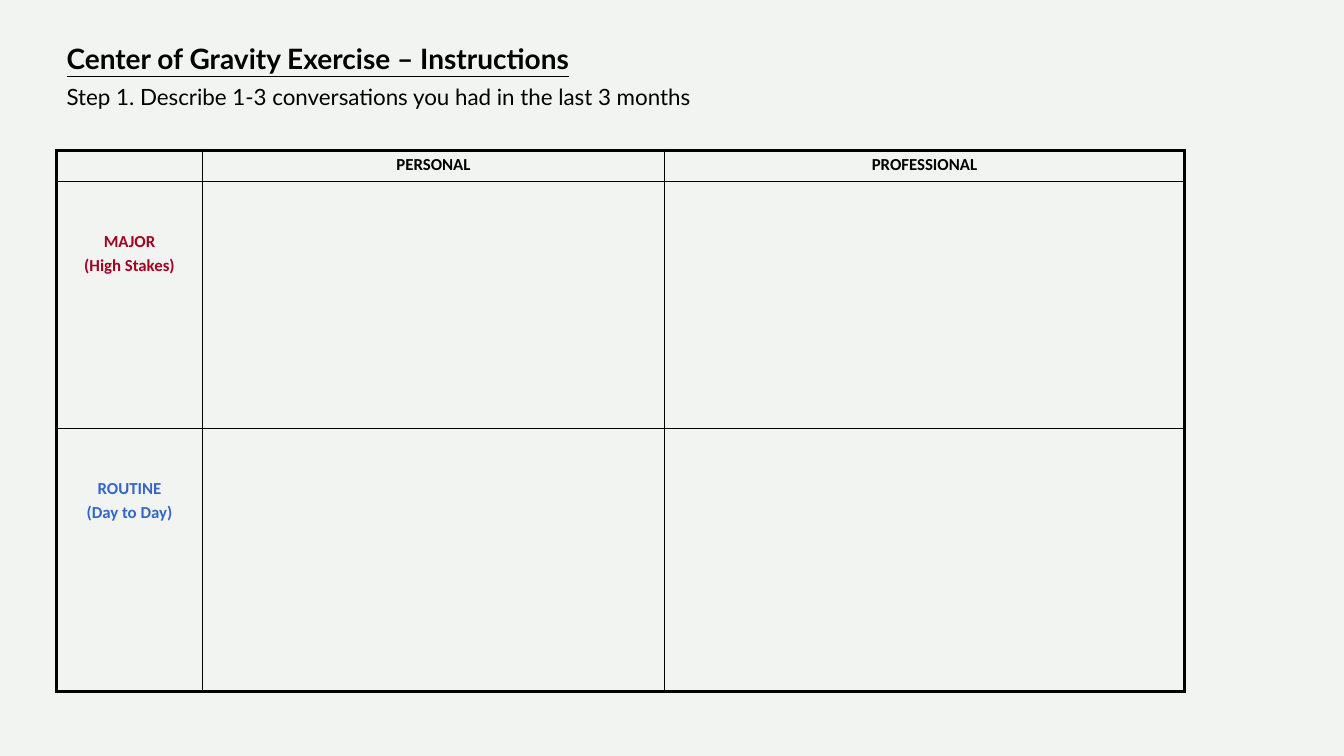
import pptx
import pptx.dml.color
import pptx.enum.text
import pptx.util
import pptx.oxml.ns
from lxml import etree

Inches, Pt = pptx.util.Inches, pptx.util.Pt
RGB = pptx.dml.color.RGBColor.from_string

# Content
HEADING = "Center of Gravity Exercise – Instructions"
STEP = "Step 1. Describe 1-3 conversations you had in the last 3 months"
COLUMNS = ["PERSONAL", "PROFESSIONAL"]
STAKES = [
    (["MAJOR", "(High Stakes)"], "major"),
    (["ROUTINE", "(Day to Day)"], "routine"),
]

THEME = {
    "background": "F2F4F1", "ink": "000000", "major": "A50021", "routine": "3366CC",
    "heading_font": "Lato", "grid_font": "Calibri",
    "heading_size": 20, "step_size": 16, "grid_size": 12,
    "outer_line": 2.25, "inner_line": 1,
}

# Layout in inches
LEFT = 0.56
TITLE_TOP, TITLE_WIDTH, TITLE_HEIGHT = 0.36, 12.21, 0.9
GRID_TOP = 1.49
COLUMN_WIDTHS = [1.45, 4.58, 5.16]
ROW_HEIGHTS = [0.31, 2.45, 2.61]
CELL_SIDE, CELL_TOP, STAKES_TOP = 0.07, 0.04, 0.5


def write(paragraph, words, font, size, color, bold=False, underline=False):
    run = paragraph.add_run()
    run.text = words
    run.font.name, run.font.size = font, Pt(size)
    run.font.bold, run.font.underline = bold, underline
    run.font.color.rgb = RGB(color)


def write_cell(cell, lines, color):
    frame = cell.text_frame
    for number, words in enumerate(lines):
        paragraph = frame.add_paragraph() if number else frame.paragraphs[0]
        paragraph.alignment = pptx.enum.text.PP_ALIGN.CENTER
        paragraph.space_before = Pt(2.4 if number else 0)
        write(paragraph, words, THEME["grid_font"], THEME["grid_size"], color, bold=True)


def draw_borders(cell, row, column):
    outer_sides = {
        "lnL": column == 0,
        "lnR": column == len(COLUMN_WIDTHS) - 1,
        "lnT": row == 0,
        "lnB": row == len(ROW_HEIGHTS) - 1,
    }
    qn = pptx.oxml.ns.qn
    properties = cell._tc.get_or_add_tcPr()
    for side, is_outer in outer_sides.items():
        width = Pt(THEME["outer_line" if is_outer else "inner_line"])
        line = etree.SubElement(properties, qn("a:" + side), w=str(width))
        fill = etree.SubElement(line, qn("a:solidFill"))
        etree.SubElement(fill, qn("a:srgbClr"), val=THEME["ink"])


def add_title(slide):
    title = slide.shapes.title
    title.left, title.top = Inches(LEFT), Inches(TITLE_TOP)
    title.width, title.height = Inches(TITLE_WIDTH), Inches(TITLE_HEIGHT)
    frame = title.text_frame
    frame.word_wrap = True
    frame.auto_size = pptx.enum.text.MSO_AUTO_SIZE.NONE
    frame.vertical_anchor = pptx.enum.text.MSO_ANCHOR.TOP
    heading, step = frame.paragraphs[0], frame.add_paragraph()
    for paragraph in (heading, step):
        paragraph.alignment = pptx.enum.text.PP_ALIGN.LEFT
        paragraph.space_after = Pt(6)
    font, ink = THEME["heading_font"], THEME["ink"]
    write(heading, HEADING, font, THEME["heading_size"], ink, bold=True, underline=True)
    write(step, STEP, font, THEME["step_size"], ink)


def add_grid(slide):
    grid = slide.shapes.add_table(
        len(ROW_HEIGHTS), len(COLUMN_WIDTHS), Inches(LEFT), Inches(GRID_TOP),
        Inches(sum(COLUMN_WIDTHS)), Inches(sum(ROW_HEIGHTS))).table
    grid.first_row = grid.horz_banding = False
    for column, width in zip(grid.columns, COLUMN_WIDTHS):
        column.width = Inches(width)
    for row, height in zip(grid.rows, ROW_HEIGHTS):
        row.height = Inches(height)

    # Empty cells keep the small type so that the header row stays low
    for row in range(len(ROW_HEIGHTS)):
        for column in range(len(COLUMN_WIDTHS)):
            cell = grid.cell(row, column)
            cell.margin_left = cell.margin_right = Inches(CELL_SIDE)
            cell.margin_top = cell.margin_bottom = Inches(CELL_TOP)
            draw_borders(cell, row, column)
            cell.fill.background()
            etree.SubElement(cell.text_frame.paragraphs[0]._p,
                             pptx.oxml.ns.qn("a:endParaRPr"),
                             sz=str(THEME["grid_size"] * 100))

    # Column and row labels
    for column, label in enumerate(COLUMNS, start=1):
        write_cell(grid.cell(0, column), [label], THEME["ink"])
    for row, (lines, color) in enumerate(STAKES, start=1):
        cell = grid.cell(row, 0)
        cell.margin_top = Inches(STAKES_TOP)
        write_cell(cell, lines, THEME[color])


def main():
    deck = pptx.Presentation()
    deck.slide_width, deck.slide_height = Inches(13.33), Inches(7.5)
    slide = deck.slides.add_slide(deck.slide_layouts[5])
    slide.background.fill.solid()
    slide.background.fill.fore_color.rgb = RGB(THEME["background"])
    add_grid(slide)
    add_title(slide)
    deck.save("out.pptx")


if __name__ == "__main__":
    main()
